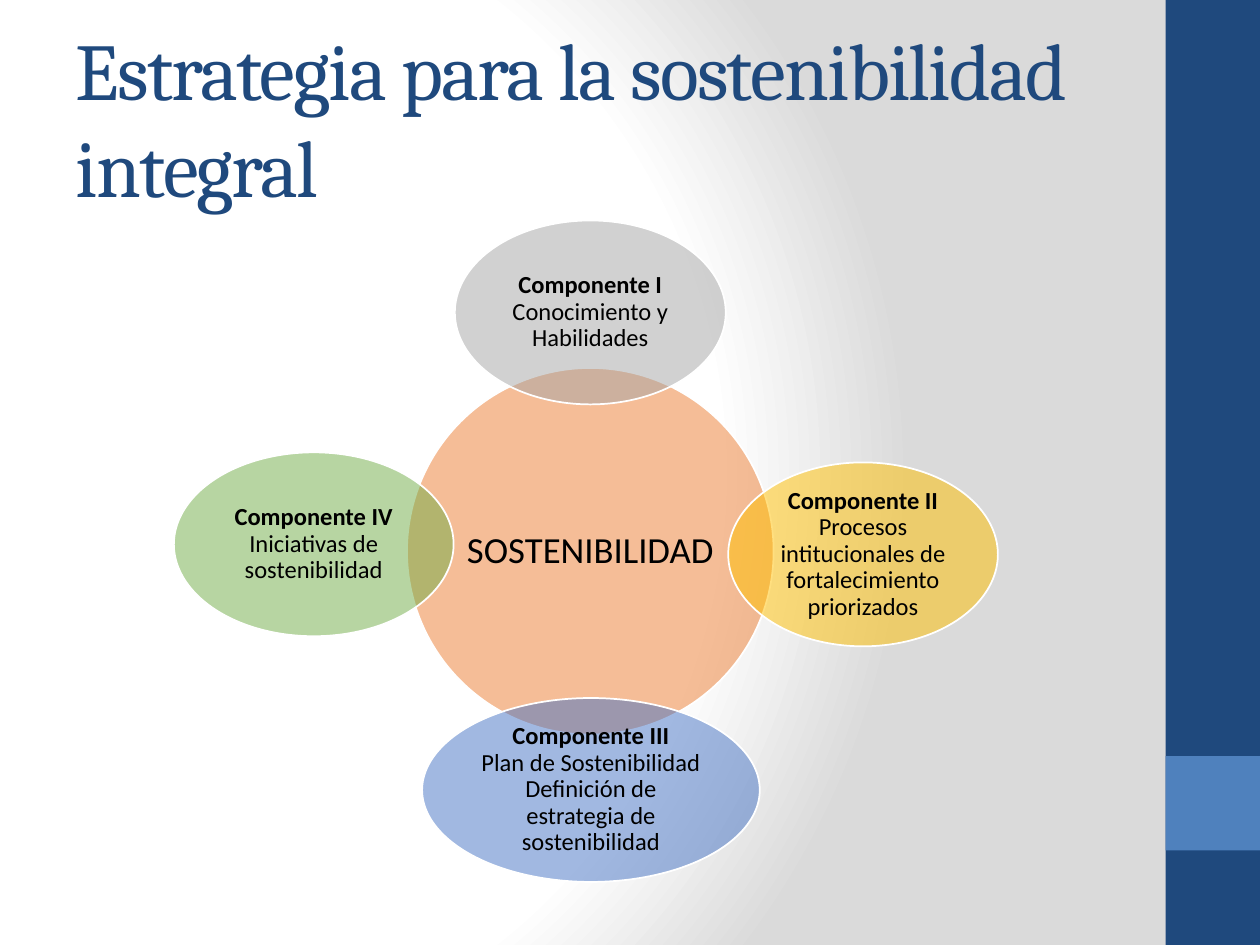
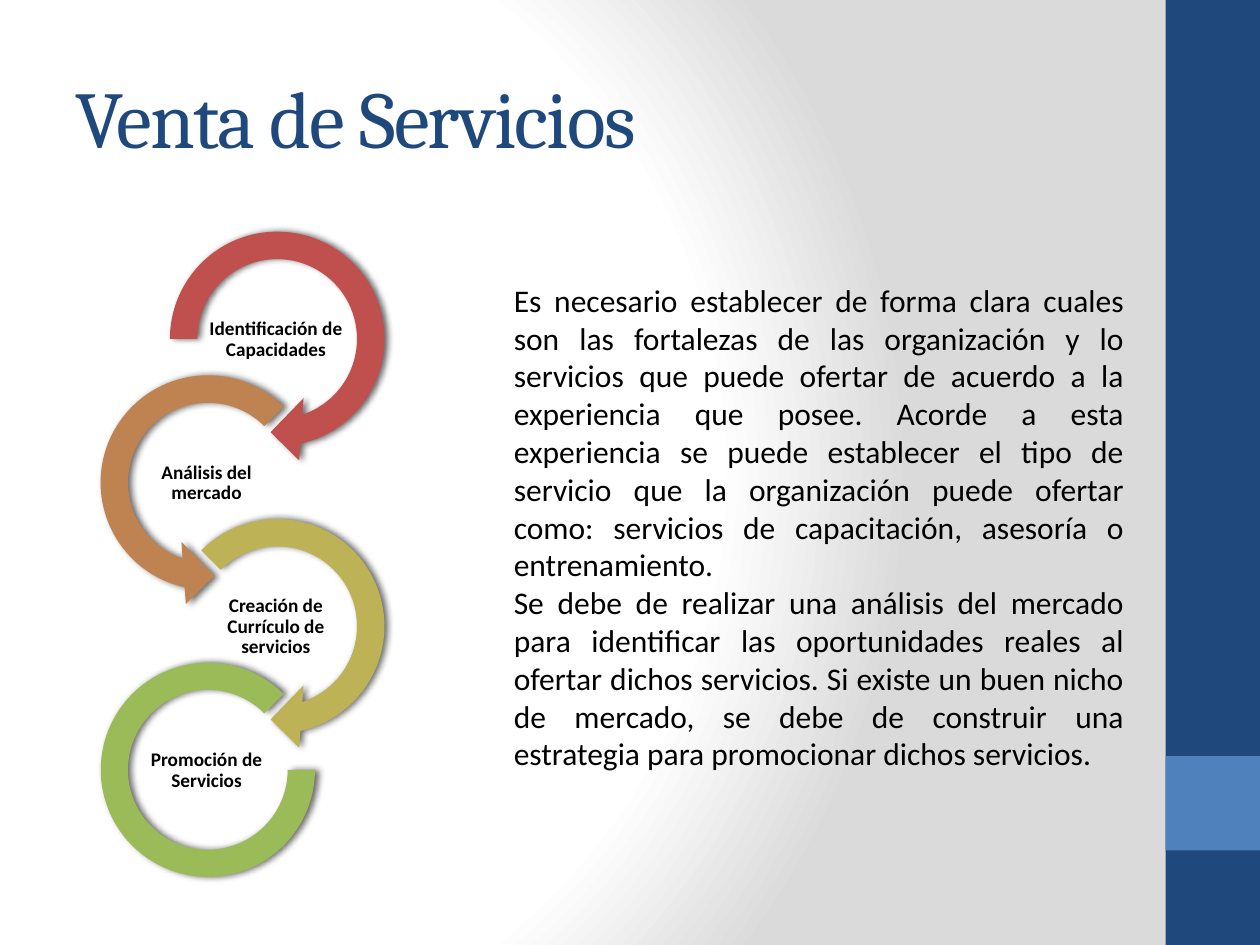
from dataclasses import dataclass
from pptx import Presentation
from pptx.dml.color import RGBColor
from pptx.enum.shapes import MSO_SHAPE
from pptx.enum.text import MSO_ANCHOR, MSO_AUTO_SIZE, PP_ALIGN
from pptx.oxml import parse_xml
from pptx.oxml.ns import nsdecls, qn
from pptx.util import Inches, Pt


@dataclass(frozen=True)
class Theme:
    navy: str = "1F497D"
    blue: str = "4F81BD"
    white: str = "FFFFFF"
    gray: str = "DADADA"
    black: str = "000000"
    title_font: str = "Cambria"
    body_font: str = "Calibri"
    title_size: int = 46
    hub_size: int = 21
    body_size: int = 18
    component_size: int = 14
    step_size: int = 11


theme = Theme()


def add_filled_shape(slide, kind, box, color):
    shape = slide.shapes.add_shape(kind, *map(Inches, box))
    shape.shadow.inherit = False
    shape.fill.solid()
    shape.fill.fore_color.rgb = RGBColor.from_string(color)
    shape.line.fill.background()
    return shape


def format_text(text_frame, size, alignment, inset, line_spacing=0.9):
    text_frame.word_wrap = True
    text_frame.margin_left = text_frame.margin_right = Inches(inset)
    text_frame.margin_top = text_frame.margin_bottom = Inches(min(inset, 0.05))
    for paragraph in text_frame.paragraphs:
        paragraph.alignment = alignment
        paragraph.line_spacing = line_spacing
        paragraph.font.size = Pt(size)
        for run in paragraph.runs:
            run.font.size = Pt(size)
            run.font.name = theme.body_font
            run.font.color.rgb = RGBColor.from_string(theme.black)


presentation = Presentation()
presentation.slide_width = Inches(10)
presentation.slide_height = Inches(7.5)

master = presentation.slide_master
master.background.fill.gradient()
gradient = master.element.find(".//" + qn("a:gradFill"))
stops = "".join(
    f'<a:gs pos="{position * 1000}"><a:srgbClr val="{color}"/></a:gs>'
    for position, color in [(0, theme.white), (75, theme.white), (100, theme.gray)]
)
gradient.getparent().replace(gradient, parse_xml(
    f'<a:gradFill {nsdecls("a")} rotWithShape="1"><a:gsLst>{stops}</a:gsLst>'
    '<a:path path="circle"><a:fillToRect l="20000" t="50000" r="100000" b="50000"/>'
    '</a:path></a:gradFill>'
))

slides = []
for title_text in ["Estrategia para la sostenibilidad integral", "Venta de Servicios"]:
    slide = presentation.slides.add_slide(presentation.slide_layouts[5])
    title = slide.shapes.title
    title.left, title.top, title.width, title.height = map(Inches, (0.5, 0.3, 8.33, 1.25))
    title.text_frame.text = title_text
    title.text_frame.auto_size = MSO_AUTO_SIZE.NONE
    title.text_frame.vertical_anchor = MSO_ANCHOR.MIDDLE
    paragraph = title.text_frame.paragraphs[0]
    paragraph.alignment = PP_ALIGN.LEFT
    font = paragraph.runs[0].font
    font.name = theme.title_font
    font.size = Pt(theme.title_size)
    font.color.rgb = RGBColor.from_string(theme.navy)
    paragraph.runs[0]._r.get_or_add_rPr().set("spc", "-100")
    slides.append(slide)

strategy_slide, services_slide = slides

bands = [((9.25, 0, 0.75, 7.5), theme.navy), ((9.25, 6, 0.75, 0.75), theme.blue)]
for position, (box, color) in enumerate(bands):
    band = add_filled_shape(strategy_slide, MSO_SHAPE.RECTANGLE, box, color)
    master.shapes.element.insert(2 + position, band.element)

components = [
    ((3.23, 2.92, 2.91, 2.91), "ED7D31", "", "SOSTENIBILIDAD", theme.hub_size),
    ((3.61, 1.75, 2.15, 1.46), "A5A5A5", "Componente I",
     "Conocimiento y Habilidades", theme.component_size),
    ((5.78, 3.67, 2.14, 1.46), "FFC000", "Componente II",
     "Procesos intitucionales de fortalecimiento priorizados", theme.component_size),
    ((3.35, 5.54, 2.68, 1.46), "4472C4", "Componente III",
     "Plan de Sostenibilidad Definición de estrategia de sostenibilidad", theme.component_size),
    ((1.38, 3.59, 2.22, 1.46), "70AD47", "Componente IV",
     "Iniciativas de sostenibilidad", theme.component_size),
]
for box, color, heading, description, size in components:
    ellipse = add_filled_shape(strategy_slide, MSO_SHAPE.OVAL, box, color)
    fill_color = ellipse.element.spPr.find(qn("a:solidFill"))[0]
    fill_color.append(parse_xml(f'<a:alpha {nsdecls("a")} val="50000"/>'))
    ellipse.line.color.rgb = RGBColor.from_string(theme.white)
    ellipse.line.width = Pt(1)
    ellipse.text_frame.vertical_anchor = MSO_ANCHOR.MIDDLE
    paragraph = ellipse.text_frame.paragraphs[0]
    if heading:
        run = paragraph.add_run()
        run.text = heading
        run.font.bold = True
        paragraph.add_line_break()
    paragraph.add_run().text = description
    format_text(ellipse.text_frame, size, PP_ALIGN.CENTER, 0.02)

steps = [
    (MSO_SHAPE.CIRCULAR_ARROW, (0.11, 11.423, 45, 108, 0.125), "C0504D",
     "Identificación de Capacidades"),
    (MSO_SHAPE.LEFT_CIRCULAR_ARROW, (0.11, 11.423, 63, 189, 0.125), "BE8351",
     "Análisis del mercado"),
    (MSO_SHAPE.CIRCULAR_ARROW, (0.11, 11.423, 45, 135, 0.125), "BDB255",
     "Creación de Currículo de servicios"),
    (MSO_SHAPE.BLOCK_ARC, (0, 189, 0.127), "9BBB59", "Promoción de Servicios"),
]
for index, (kind, adjustments, color, label) in enumerate(steps):
    left = 0.66 if index % 2 else 1.21
    top = 1.7 + index * 1.14
    inset = 0.14 if kind == MSO_SHAPE.BLOCK_ARC else 0
    side = 1.98 - 2 * inset
    arrow = add_filled_shape(services_slide, kind, (left + inset, top + inset, side, side), color)
    for position, value in enumerate(adjustments):
        arrow.adjustments[position] = value
    arrow.element.spPr.find(qn("a:effectLst")).append(parse_xml(
        f'<a:outerShdw {nsdecls("a")} blurRad="{Pt(4)}" dist="{Pt(2)}" dir="0" rotWithShape="0">'
        f'<a:srgbClr val="{theme.black}"><a:alpha val="60000"/></a:srgbClr></a:outerShdw>'
    ))
    label_box = services_slide.shapes.add_textbox(
        *map(Inches, (left + 0.43, top + 0.72, 1.1, 0.55)))
    label_box.text_frame.text = label
    label_box.text_frame.vertical_anchor = MSO_ANCHOR.MIDDLE
    format_text(label_box.text_frame, theme.step_size, PP_ALIGN.CENTER, 0.01)
    label_box.text_frame.paragraphs[0].runs[0].font.bold = True

description_box = services_slide.shapes.add_textbox(*map(Inches, (3.98, 2.18, 5.04, 4.04)))
description_box.text_frame.text = "\n".join([
    "Es necesario establecer de forma clara cuales son las fortalezas de las organización "
    "y lo servicios que puede ofertar de acuerdo a la experiencia que posee. Acorde a esta "
    "experiencia se puede establecer el tipo de servicio que la organización puede ofertar "
    "como: servicios de capacitación, asesoría o entrenamiento.",
    "Se debe de realizar una análisis del mercado para identificar las oportunidades reales "
    "al ofertar dichos servicios. Si existe un buen nicho de mercado, se debe de construir "
    "una estrategia para promocionar dichos servicios.",
])
format_text(description_box.text_frame, theme.body_size, PP_ALIGN.JUSTIFY, 0.1, 1.0)

presentation.save("out.pptx")
